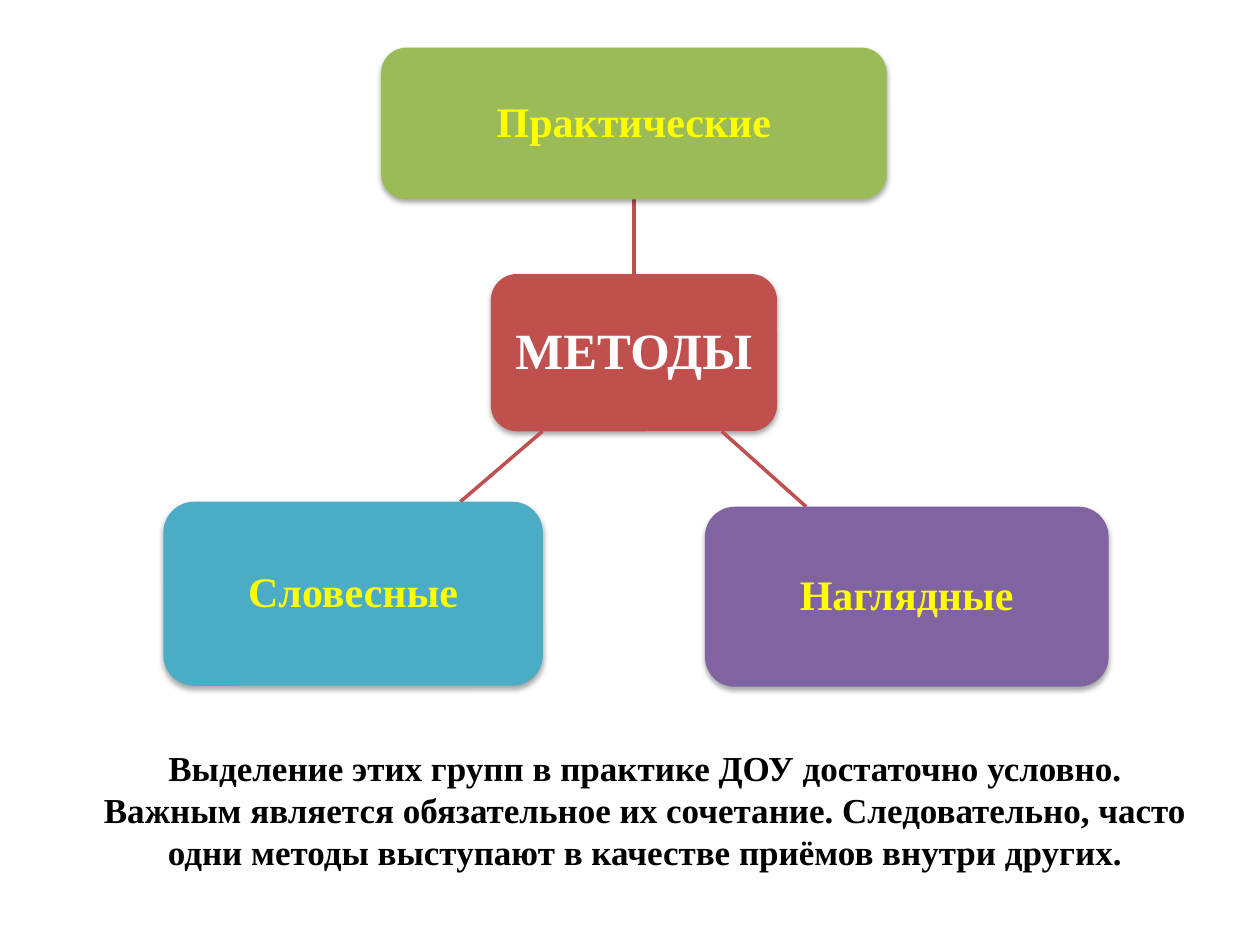
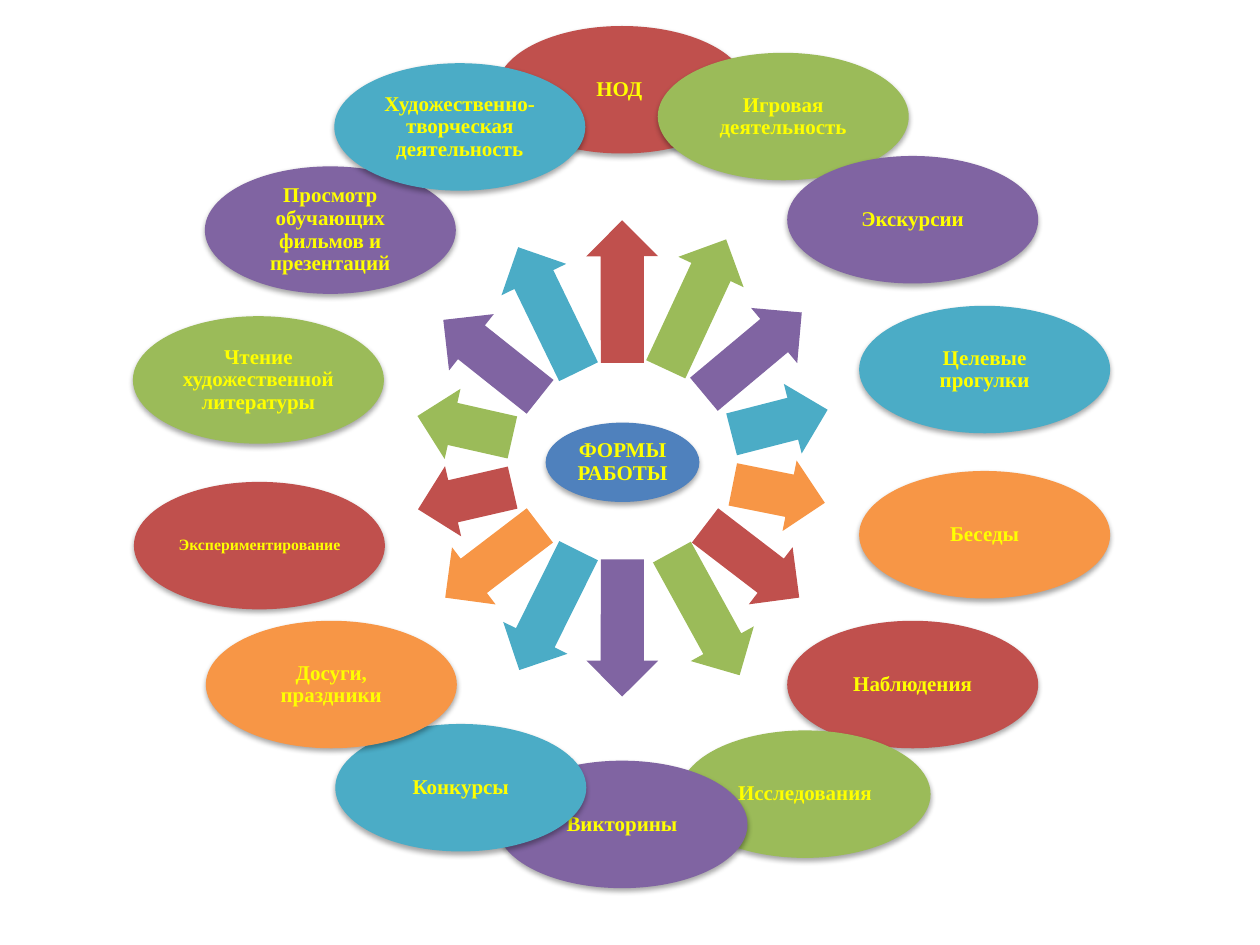
from itertools import cycle
from math import atan2, cos, degrees, hypot, sin

from lxml.etree import SubElement
from pptx import Presentation
from pptx.dml.color import RGBColor
from pptx.enum.shapes import MSO_CONNECTOR, MSO_SHAPE
from pptx.enum.text import MSO_ANCHOR, PP_ALIGN
from pptx.oxml.ns import qn
from pptx.util import Cm, Pt

RED, GREEN, PURPLE, TEAL, ORANGE = "C0504D", "9BBB59", "8064A2", "4BACC6", "F79646"
BLUE, YELLOW, WHITE, BLACK = "4F81BD", "FFFF00", "FFFFFF", "000000"
FONT = {"name": "Times New Roman", "bold": True}

HUB = (9.49, 6.14, 5.77, 3.17)
METHODS = [
    ("Практические", GREEN, (9.49, 1.52, 10.19, 3.06)),
    ("Наглядные", PURPLE, (14.99, 11.06, 8.14, 3.63)),
    ("Словесные", TEAL, (3.83, 11.0, 7.65, 3.71)),
]
CAPTION = (
    "Выделение этих групп в практике ДОУ достаточно условно. "
    "Важным является обязательное их сочетание. Следовательно, часто "
    "одни методы выступают в качестве приёмов внутри других."
)

CORE = (9.89, 8.79, 3.1, 1.6)
NODE = (5.06, 2.57)
FORMS = [
    ("НОД ", 9.88, 1.28, 12),
    ("Игровая деятельность", 13.13, 1.82, 12),
    ("Экскурсии", 15.74, 3.9, 12),
    ("Целевые прогулки", 17.19, 6.92, 12),
    ("Беседы", 17.19, 10.25, 12),
    ("Наблюдения", 15.74, 13.27, 12),
    ("Исследования", 13.57, 15.48, 12),
    ("Викторины", 9.88, 16.09, 12),
    ("Конкурсы", 6.63, 15.35, 12),
    ("Досуги, праздники", 4.02, 13.27, 12),
    ("Экспериментирование", 2.57, 10.47, 9),
    ("Чтение художественной литературы", 2.55, 7.13, 12),
    ("Просмотр обучающих фильмов и презентаций", 4.0, 4.11, 12),
    ("Художественно-творческая деятельность", 6.61, 2.03, 12),
]


def color(code):
    return RGBColor.from_string(code)


def assign(item, values):
    for key, value in values.items():
        setattr(item, key, value)


def write(shape, text, size, ink, sides, ends, space=0.9):
    frame = shape.text_frame
    assign(frame, {
        "margin_left": Cm(sides), "margin_right": Cm(sides),
        "margin_top": Cm(ends), "margin_bottom": Cm(ends),
        "word_wrap": True, "vertical_anchor": MSO_ANCHOR.MIDDLE,
    })
    line = frame.paragraphs[0]
    assign(line, {"alignment": PP_ALIGN.CENTER, "line_spacing": space})
    run = line.add_run()
    run.text = text
    assign(run.font, FONT | {"size": Pt(size)})
    run.font.color.rgb = color(ink)


def draw(slide, kind, spot, fill):
    x, y, wide, high = spot
    shape = slide.shapes.add_shape(
        kind, Cm(x - wide / 2), Cm(y - high / 2), Cm(wide), Cm(high))
    shape.shadow.inherit = False
    shape.fill.solid()
    shape.fill.fore_color.rgb = color(fill)
    shape.line.fill.background()
    return shape


def shade(shape):
    effects = shape._element.spPr.find(qn("a:effectLst"))
    outer = SubElement(effects, qn("a:outerShdw"), blurRad="40000",
                       dist="23000", dir="5400000", rotWithShape="0")
    tint = SubElement(outer, qn("a:srgbClr"), val=BLACK)
    SubElement(tint, qn("a:alpha"), val="35000")


def label(slide, kind, spot, fill, text, size, ink, inset):
    shape = draw(slide, kind, spot, fill)
    shade(shape)
    write(shape, text, size, ink, inset, inset)


def shift(spot, box):
    return (spot[0] + box[0], spot[1] + box[1], *spot[2:])


def link(slide, start, end):
    dx, dy = end[0] - start[0], end[1] - start[1]
    near = start[3] / 2 / abs(dy)
    far = 1 - end[3] / 2 / abs(dy)
    points = [Cm(v) for part in (near, far)
              for v in (start[0] + dx * part, start[1] + dy * part)]
    line = slide.shapes.add_connector(MSO_CONNECTOR.STRAIGHT, *points)
    line.line.color.rgb = color(RED)
    line.line.width = Pt(2)
    SubElement(line._element.spPr, qn("a:effectLst"))


def add_tree(slide, box):
    hub = shift(HUB, box)
    kind = MSO_SHAPE.ROUNDED_RECTANGLE
    label(slide, kind, hub, RED, "МЕТОДЫ", 29, WHITE, 0.2)
    for text, fill, spot in METHODS:
        spot = shift(spot, box)
        link(slide, hub, spot)
        label(slide, kind, spot, fill, text, 24, YELLOW, 0.18)


def add_note(slide, box):
    note = slide.shapes.add_textbox(*map(Cm, box))
    write(note, CAPTION, 20, BLACK, 0.25, 0.13, 1.0)


def reach(spot, angle):
    return 1 / hypot(cos(angle) * 2 / spot[2], sin(angle) * 2 / spot[3])


def point(slide, start, end, fill):
    dx, dy = end[0] - start[0], end[1] - start[1]
    angle = atan2(dy, dx)
    inner = reach(start, angle)
    gap = hypot(dx, dy) - inner - reach(end, angle)
    mid = inner + 0.487 * gap
    spot = (start[0] + mid * cos(angle), start[1] + mid * sin(angle), 0.53 * gap, 1.45)
    arrow = draw(slide, MSO_SHAPE.RIGHT_ARROW, spot, fill)
    arrow.rotation = degrees(angle) % 360
    arrow.adjustments[0] = 0.6
    arrow.adjustments[1] = 0.5


def add_ring(slide, box):
    core = shift(CORE, box)
    label(slide, MSO_SHAPE.OVAL, core, BLUE, "ФОРМЫ РАБОТЫ", 12, YELLOW, 0.05)
    fills = cycle((RED, GREEN, PURPLE, TEAL, ORANGE))
    for (text, x, y, size), fill in zip(FORMS, fills):
        spot = shift((x, y, *NODE), box)
        point(slide, core, spot, fill)
        label(slide, MSO_SHAPE.OVAL, spot, fill, text, size, YELLOW, 0.04)


def main():
    deck = Presentation()
    assign(deck, {"slide_width": Cm(25.4), "slide_height": Cm(19.05)})
    blank = deck.slide_layouts[6]
    first = deck.slides.add_slide(blank)
    add_tree(first, (3.29, 0.97))
    add_note(first, (1.7, 14.9, 22.61, 2.82))
    add_ring(deck.slides.add_slide(blank), (2.66, 0.53))
    deck.save("out.pptx")


if __name__ == "__main__":
    main()
